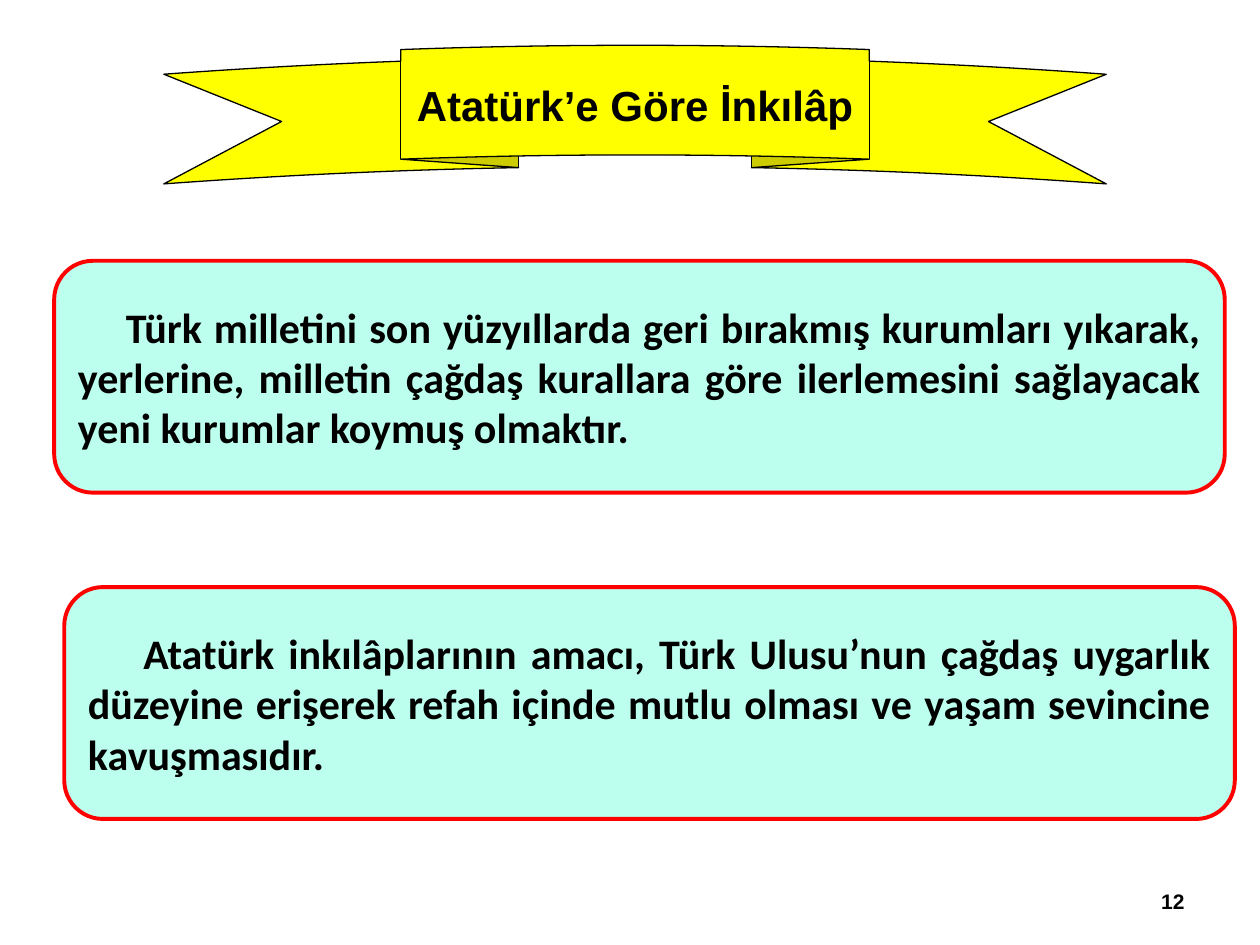
"""Build the slide on Atatürk's view of reform, with a ribbon title and two panels."""
from pptx import Presentation
from pptx import util as u
from pptx.dml.color import RGBColor
from pptx.enum import shapes, text

BLACK = RGBColor(0x00, 0x00, 0x00)
RED = RGBColor(0xFF, 0x00, 0x00)
YELLOW = RGBColor(0xFF, 0xFF, 0x00)
MINT = RGBColor(0xBD, 0xFF, 0xEE)

TITLE = "Atatürk’e Göre İnkılâp"
PAGE_NUMBER = "12"
PANELS = [
    {"left": 0.43, "top": 2.07, "indent": 0.38,
     "words": "Türk milletini son yüzyıllarda geri bırakmış kurumları yıkarak, "
              "yerlerine, milletin çağdaş kurallara göre ilerlemesini sağlayacak "
              "yeni kurumlar koymuş olmaktır."},
    {"left": 0.51, "top": 4.66, "indent": 0.44,
     "words": "Atatürk inkılâplarının amacı, Türk Ulusu’nun çağdaş uygarlık "
              "düzeyine erişerek refah içinde mutlu olması ve yaşam sevincine "
              "kavuşmasıdır."},
]
PANEL_SIZE = (9.29, 1.84)
RIBBON_BOX = (1.3, 0.36, 7.48, 1.1)
RIBBON_ADJUSTMENTS = (0.209, 0.497, 0.125)
TITLE_BOX = (3.18, 0.36, 3.72, 0.95)
NUMBER_BOX = (7.17, 6.95, 2.33, 0.4)


def inches(box):
    return [u.Inches(length) for length in box]


def write(shape, words, *, align, font="Arial", size=24, indent=0, wrap=True):
    frame = shape.text_frame
    frame.text = words
    frame.word_wrap = wrap
    frame.auto_size = text.MSO_AUTO_SIZE.NONE
    frame.vertical_anchor = text.MSO_ANCHOR.MIDDLE
    paragraph = frame.paragraphs[0]
    paragraph.alignment = align
    if indent:
        paragraph._p.get_or_add_pPr().set("indent", str(u.Inches(indent)))
    run_font = paragraph.runs[0].font
    run_font.name, run_font.size, run_font.bold = font, u.Pt(size), True
    run_font.color.rgb = BLACK


def add_outlined(slide, kind, box, fill, line, width):
    shape = slide.shapes.add_shape(kind, *inches(box))
    shape.shadow.inherit = False
    shape.fill.solid()
    shape.fill.fore_color.rgb = fill
    shape.line.color.rgb = line
    shape.line.width = u.Pt(width)
    return shape


def main():
    presentation = Presentation()
    presentation.slide_width, presentation.slide_height = inches((10, 7.5))
    slide = presentation.slides.add_slide(presentation.slide_layouts[5])

    ribbon = add_outlined(slide, shapes.MSO_SHAPE.CURVED_UP_RIBBON,
                          RIBBON_BOX, YELLOW, BLACK, 0.75)
    for index, value in enumerate(RIBBON_ADJUSTMENTS):
        ribbon.adjustments[index] = value

    title = slide.shapes.title
    title.left, title.top, title.width, title.height = inches(TITLE_BOX)
    write(title, TITLE, align=text.PP_ALIGN.CENTER, wrap=False)
    ribbon._element.addnext(title._element)

    for panel in PANELS:
        box = (panel["left"], panel["top"], *PANEL_SIZE)
        shape = add_outlined(slide, shapes.MSO_SHAPE.FLOWCHART_ALTERNATE_PROCESS,
                             box, MINT, RED, 2.25)
        write(shape, panel["words"], align=text.PP_ALIGN.JUSTIFY,
              font="Calibri", indent=panel["indent"])

    number = slide.shapes.add_textbox(*inches(NUMBER_BOX))
    write(number, PAGE_NUMBER, align=text.PP_ALIGN.RIGHT, size=12)

    presentation.save("out.pptx")


if __name__ == "__main__":
    main()
